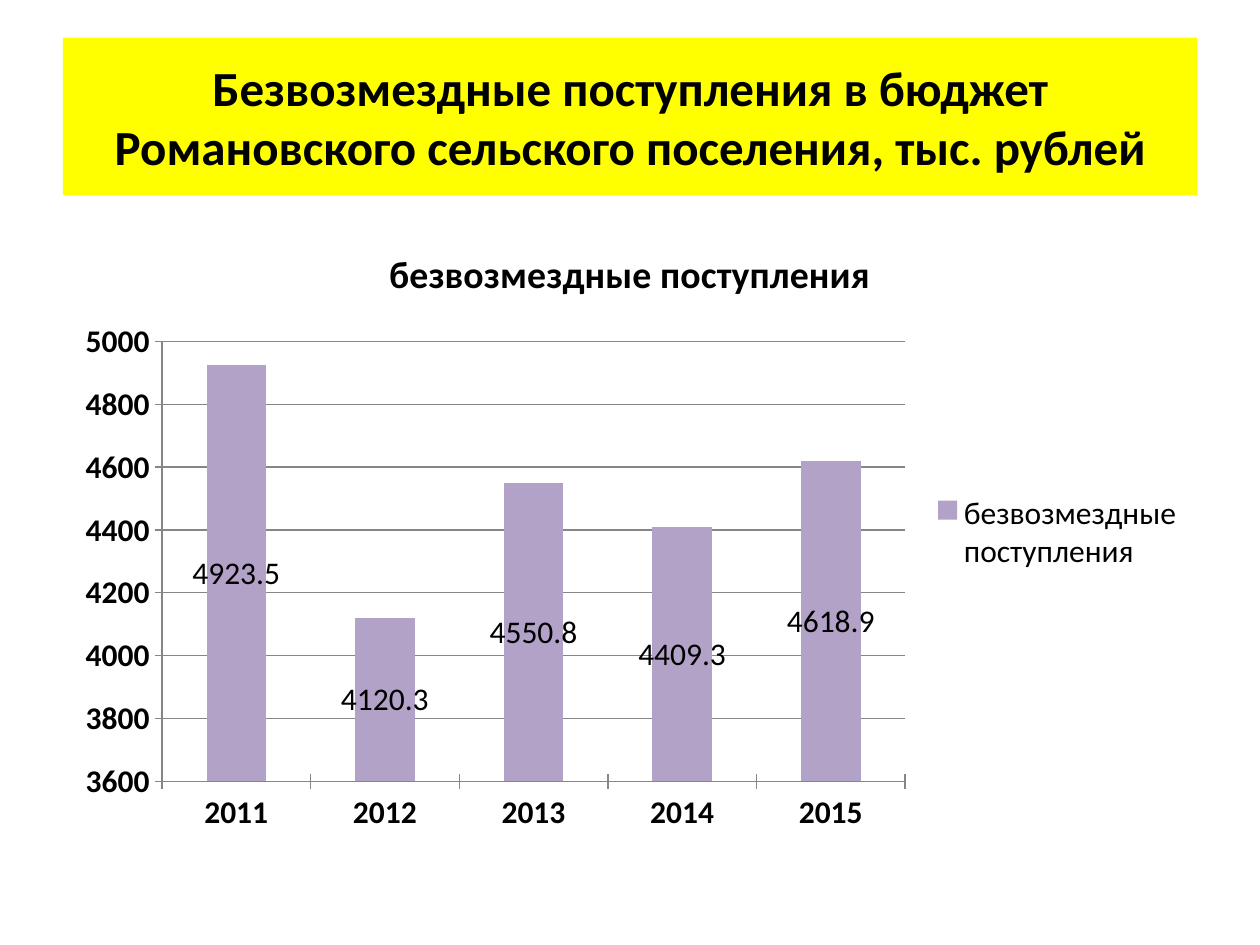
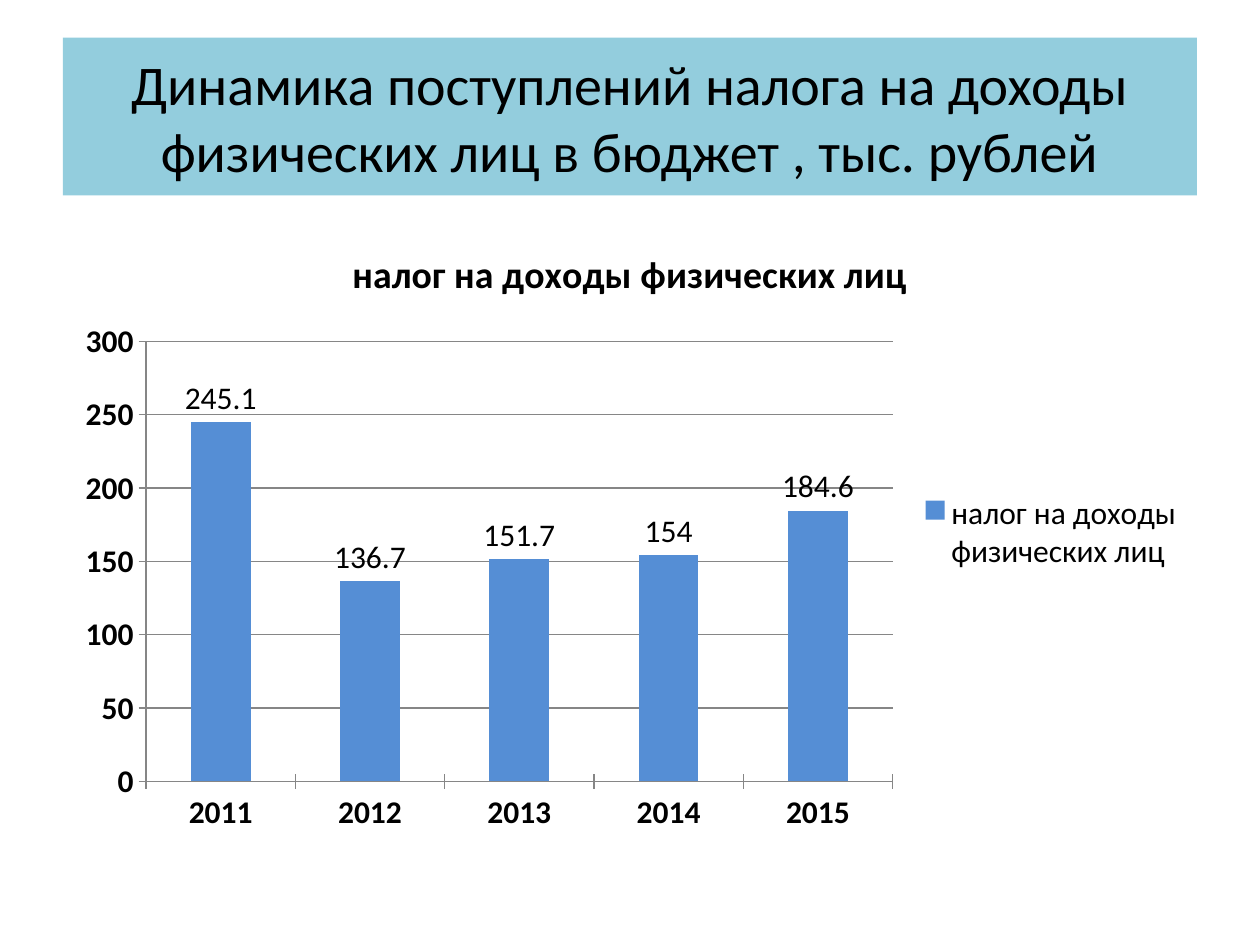
from pptx import Presentation
from pptx.chart.data import CategoryChartData
from pptx.dml.color import RGBColor as RGB
from pptx.enum.chart import XL_CHART_TYPE as CT, XL_LABEL_POSITION as LP
from pptx.enum.chart import XL_LEGEND_POSITION as LEG, XL_TICK_MARK as TICK
from pptx.enum.shapes import MSO_SHAPE
from pptx.enum.text import MSO_ANCHOR, PP_ALIGN
from pptx.util import Cm, Pt
from dataclasses import dataclass

# Content
YEARS = ["2011", "2012", "2013", "2014", "2015"]
SLIDES = [
    dict(title="Безвозмездные поступления в бюджет Романовского сельского поселения, тыс. рублей",
         band="FFFF00", size=28, bold=True,
         series="безвозмездные поступления", values=[4923.5, 4120.3, 4550.8, 4409.3, 4618.9],
         kind=CT.COLUMN_STACKED, bar="B3A2C7", labels=LP.CENTER, overlap=100,
         scale=dict(minimum_scale=3600, maximum_scale=5000, major_unit=200)),
    dict(title="Динамика поступлений налога на доходы физических лиц в бюджет , тыс. рублей",
         band="93CDDD", size=32, bold=False,
         series="налог на доходы физических лиц", values=[245.1, 136.7, 151.7, 154, 184.6],
         kind=CT.COLUMN_CLUSTERED, bar="558ED5", labels=LP.OUTSIDE_END, overlap=0,
         scale=dict(minimum_scale=0, maximum_scale=300, major_unit=50)),
]


@dataclass(frozen=True)
class Theme:
    font: str = "Calibri"
    text: str = "000000"
    line: str = "868686"
    chart_size: float = 18
    chart_title_size: float = 21.6
    line_width: float = 0.75


T = Theme()
W, H = Cm(25.4), Cm(19.05)
MARGIN = Cm(1.27)
INNER = W - 2 * MARGIN
BAND_TOP, BAND_H = Cm(0.76), Cm(3.18)
CHART_TOP, CHART_H = Cm(4.45), Cm(12.57)


def apply(obj, values):
    for name, value in values.items():
        setattr(obj, name, value)


def style_font(font, size, bold=False):
    apply(font, dict(name=T.font, size=Pt(size), bold=bold))
    font.color.rgb = RGB.from_string(T.text)


def style_line(line):
    line.color.rgb = RGB.from_string(T.line)
    line.width = Pt(T.line_width)


def add_band(s, item):
    sp = s.shapes.add_shape(MSO_SHAPE.RECTANGLE, MARGIN, BAND_TOP, INNER, BAND_H)
    sp.shadow.inherit = False
    sp.fill.solid()
    sp.fill.fore_color.rgb = RGB.from_string(item["band"])
    sp.line.fill.background()
    tf = sp.text_frame
    apply(tf, dict(word_wrap=True, vertical_anchor=MSO_ANCHOR.MIDDLE))
    p = tf.paragraphs[0]
    p.alignment = PP_ALIGN.CENTER
    r = p.add_run()
    r.text = item["title"]
    style_font(r.font, item["size"], item["bold"])


def add_column_chart(s, item):
    data = CategoryChartData()
    data.categories = YEARS
    data.add_series(item["series"], item["values"])
    chart = s.shapes.add_chart(item["kind"], MARGIN, CHART_TOP, INNER, CHART_H, data).chart
    style_font(chart.font, T.chart_size)

    # Title and legend
    chart.has_title = True
    r = chart.chart_title.text_frame.paragraphs[0].add_run()
    r.text = item["series"]
    style_font(r.font, T.chart_title_size, True)
    chart.has_legend = True
    apply(chart.legend, dict(position=LEG.RIGHT, include_in_layout=False))
    style_font(chart.legend.font, T.chart_size)

    # Axes
    for axis in (chart.category_axis, chart.value_axis):
        axis.major_tick_mark = TICK.CROSS
        style_font(axis.tick_labels.font, T.chart_size, True)
        style_line(axis.format.line)
    apply(chart.value_axis, dict(has_major_gridlines=True, **item["scale"]))
    style_line(chart.value_axis.major_gridlines.format.line)

    # Columns and their values
    plot = chart.plots[0]
    apply(plot, dict(gap_width=150, overlap=item["overlap"],
                     vary_by_categories=False, has_data_labels=True))
    apply(plot.data_labels, dict(show_value=True, position=item["labels"]))
    style_font(plot.data_labels.font, T.chart_size)
    fill = plot.series[0].format.fill
    fill.solid()
    fill.fore_color.rgb = RGB.from_string(item["bar"])


def main():
    prs = Presentation()
    apply(prs, dict(slide_width=W, slide_height=H))
    for item in SLIDES:
        s = prs.slides.add_slide(prs.slide_layouts[6])
        add_band(s, item)
        add_column_chart(s, item)
    prs.save("out.pptx")


if __name__ == "__main__":
    main()
